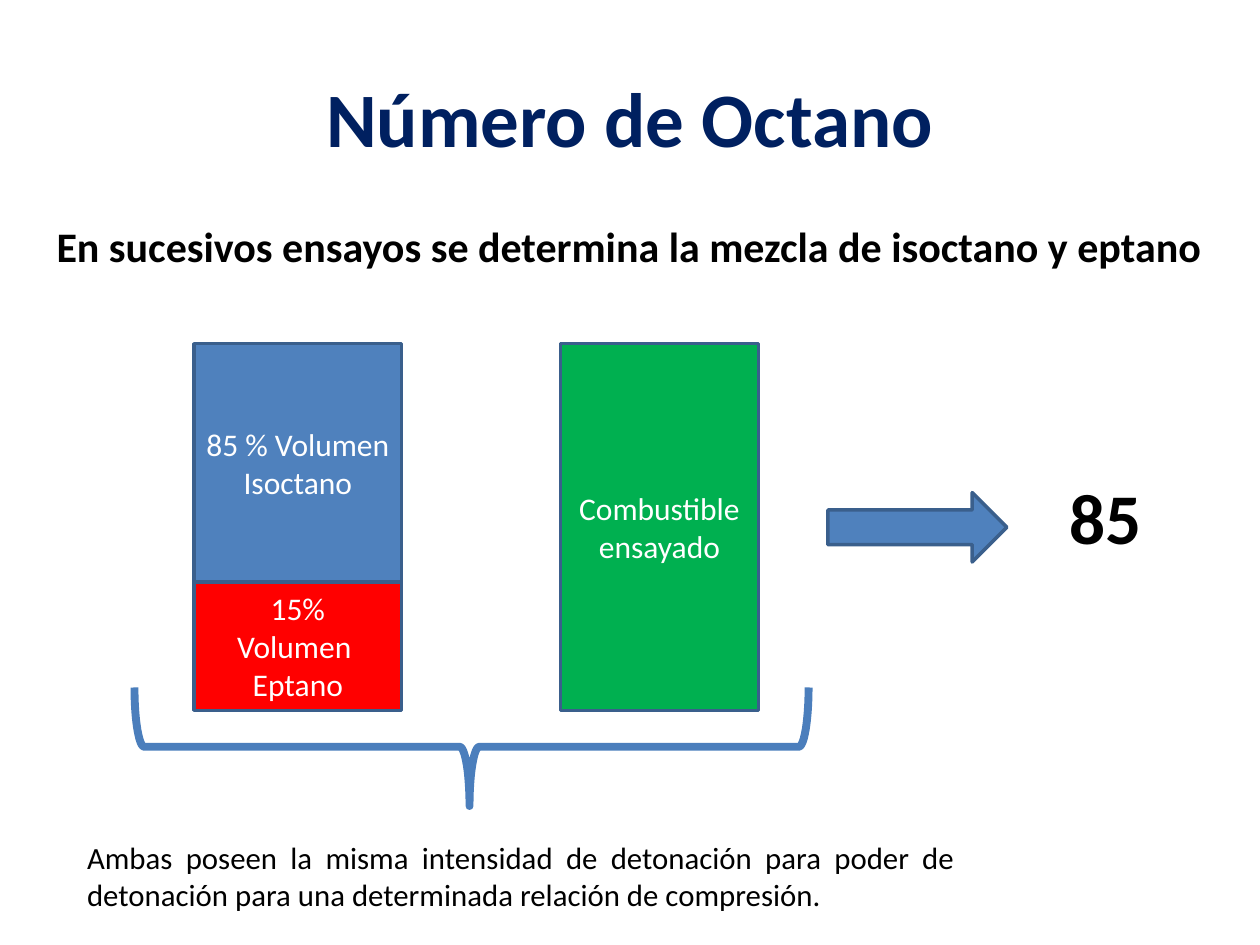
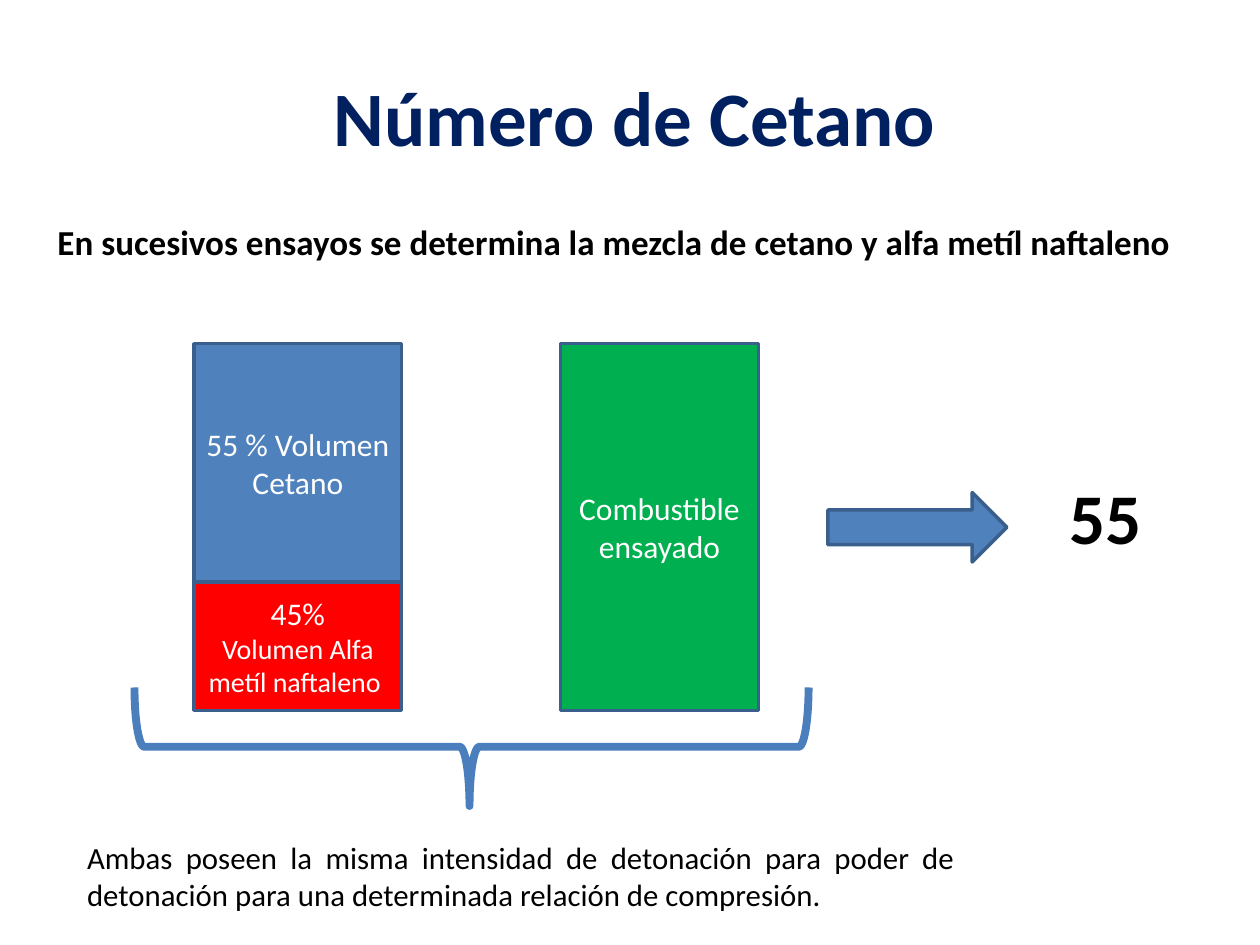
from collections import namedtuple

from lxml.etree import SubElement
from pptx import Presentation
from pptx.dml.color import RGBColor
from pptx.enum.shapes import MSO_SHAPE as Preset
from pptx.enum.text import MSO_ANCHOR as Anchor, MSO_AUTO_SIZE as AutoSize, PP_ALIGN as Align
from pptx.oxml.ns import qn
from pptx.util import Cm, Pt

COLORS = {
    "title": "002060",
    "text": "000000",
    "label": "FFFFFF",
    "main": "4F81BD",
    "rest": "FF0000",
    "fuel": "00B050",
    "outline": "3A5F8C",
    "brace": "4B7EBC",
}
FONT = "Calibri"
CONCLUSION = ("Ambas poseen la misma intensidad de detonación para poder de "
              "detonación para una determinada relación de compresión.")

# All box lengths are centimetres.
Box = namedtuple("Box", "left top width height")
COMPARISON = Box(3.91, 6.93, 11.38, 7.39)
RESULT = Box(16.69, 9.42, 6.63, 2.21)
CONCLUSION_BOX = Box(1.5, 16.79, 18.01, 1.8)

SLIDES = [
    {
        "title": "Número de Octano",
        "title_box": Box(1.27, 0.76, 22.86, 3.18),
        "heading": "En sucesivos ensayos se determina la mezcla de isoctano y eptano",
        "heading_box": Box(0.89, 4.32, 23.8, 1.27),
        "heading_size": 24,
        "main": [("85 % Volumen ", 18), ("Isoctano", 18)],
        "rest": [("15%", 18), ("Volumen ", 18), ("Eptano", 18)],
        "number": "85",
    },
    {
        "title": "Número de Cetano",
        "title_box": Box(1.37, 0.74, 22.86, 3.18),
        "heading": "En sucesivos ensayos se determina la mezcla de cetano y alfa metíl naftaleno",
        "heading_box": Box(0.91, 4.32, 24.41, 1.12),
        "heading_size": 20,
        "main": [("55 % Volumen ", 18), ("Cetano", 18)],
        "rest": [("45%", 18), ("Volumen Alfa metíl naftaleno ", 16)],
        "number": "55",
    },
]


def rgb(name):
    return RGBColor.from_string(COLORS[name])


def set_attributes(target, values):
    for name, value in values.items():
        setattr(target, name, value)


def place(shape, box):
    set_attributes(shape, {side: Cm(length) for side, length in box._asdict().items()})


def write(shape, lines, color, bold=False, paragraph_format=None, **frame_format):
    """Fill a shape with one paragraph for each (text, size) pair."""
    frame = shape.text_frame
    set_attributes(frame, {"word_wrap": True, "auto_size": AutoSize.NONE, **frame_format})
    for index, (text, size) in enumerate(lines):
        paragraph = frame.add_paragraph() if index else frame.paragraphs[0]
        set_attributes(paragraph, paragraph_format or {})
        run = paragraph.add_run()
        run.text = text
        set_attributes(run.font, {"name": FONT, "size": Pt(size), "bold": bold})
        run.font.color.rgb = rgb(color)


def add_preset(shapes, preset, box, fill=None, line="outline", line_width=2):
    shape = shapes.add_shape(preset, *map(Cm, box))
    shape.shadow.inherit = False
    if fill:
        shape.fill.solid()
        shape.fill.fore_color.rgb = rgb(fill)
    else:
        shape.fill.background()
    shape.line.color.rgb = rgb(line)
    shape.line.width = Pt(line_width)
    return shape


def add_block(shapes, box, fill, lines):
    block = add_preset(shapes, Preset.RECTANGLE, box, fill)
    write(block, lines, "label", paragraph_format={"alignment": Align.CENTER},
          vertical_anchor=Anchor.MIDDLE)


def add_brace(shapes, box):
    """Draw a brace that opens upwards and fills the box once it is turned."""
    turned = Box(box.left + (box.width - box.height) / 2,
                 box.top + (box.height - box.width) / 2, box.height, box.width)
    brace = add_preset(shapes, Preset.RIGHT_BRACE, turned, line="brace", line_width=4.5)
    brace.rotation = 90
    brace.adjustments[0], brace.adjustments[1] = 0.083, 0.503


def add_comparison(slide, box, main, rest):
    """Stack the reference mixture at the left, the fuel at the right, a brace below."""
    shapes = slide.shapes.add_group_shape().shapes
    mix_width, main_height, fuel_width = 4.19, 4.8, 3.99
    add_block(shapes, Box(box.left, box.top, mix_width, main_height), "main", main)
    add_block(shapes, Box(box.left, box.top + main_height, mix_width,
                          box.height - main_height), "rest", rest)
    add_block(shapes, Box(box.left + box.width - fuel_width, box.top, fuel_width, box.height),
              "fuel", [("Combustible ensayado", 18)])
    add_brace(shapes, Box(box.left - 1.2, box.top + box.height - 0.46, 13.59, 2.39))


def add_result(slide, box, number):
    arrow_height, number_width = 1.4, 2.01
    add_preset(slide.shapes, Preset.RIGHT_ARROW,
               Box(box.left, box.top + 0.51, 3.61, arrow_height), "main")
    number_box = Box(box.left + box.width - number_width, box.top, number_width, box.height)
    write(slide.shapes.add_textbox(*map(Cm, number_box)), [(number, 40.7)], "text", bold=True,
          paragraph_format={"alignment": Align.JUSTIFY, "space_before": Pt(8)})


def add_conclusion(slide, box):
    body = slide.placeholders[1]
    place(body, box)
    write(body, [(CONCLUSION, 17.6)], "text", paragraph_format={"alignment": Align.JUSTIFY})
    properties = body.text_frame.paragraphs[0]._p.get_or_add_pPr()
    properties.set("marL", "0")
    properties.set("indent", "0")
    SubElement(properties, qn("a:buNone"))


def add_headings(slide, content):
    title = slide.shapes.title
    place(title, content["title_box"])
    write(title, [(content["title"], 44)], "title", bold=True,
          paragraph_format={"alignment": Align.CENTER}, vertical_anchor=Anchor.MIDDLE)
    heading = slide.shapes.add_textbox(*map(Cm, content["heading_box"]))
    write(heading, [(content["heading"], content["heading_size"])], "text", bold=True,
          auto_size=AutoSize.SHAPE_TO_FIT_TEXT)


def add_fuel_slide(deck, content):
    slide = deck.slides.add_slide(deck.slide_layouts[1])
    add_comparison(slide, COMPARISON, content["main"], content["rest"])
    add_conclusion(slide, CONCLUSION_BOX)
    add_headings(slide, content)
    add_result(slide, RESULT, content["number"])


def main():
    deck = Presentation()
    deck.slide_width, deck.slide_height = Cm(25.4), Cm(19.05)
    for content in SLIDES:
        add_fuel_slide(deck, content)
    deck.save("out.pptx")


if __name__ == "__main__":
    main()
